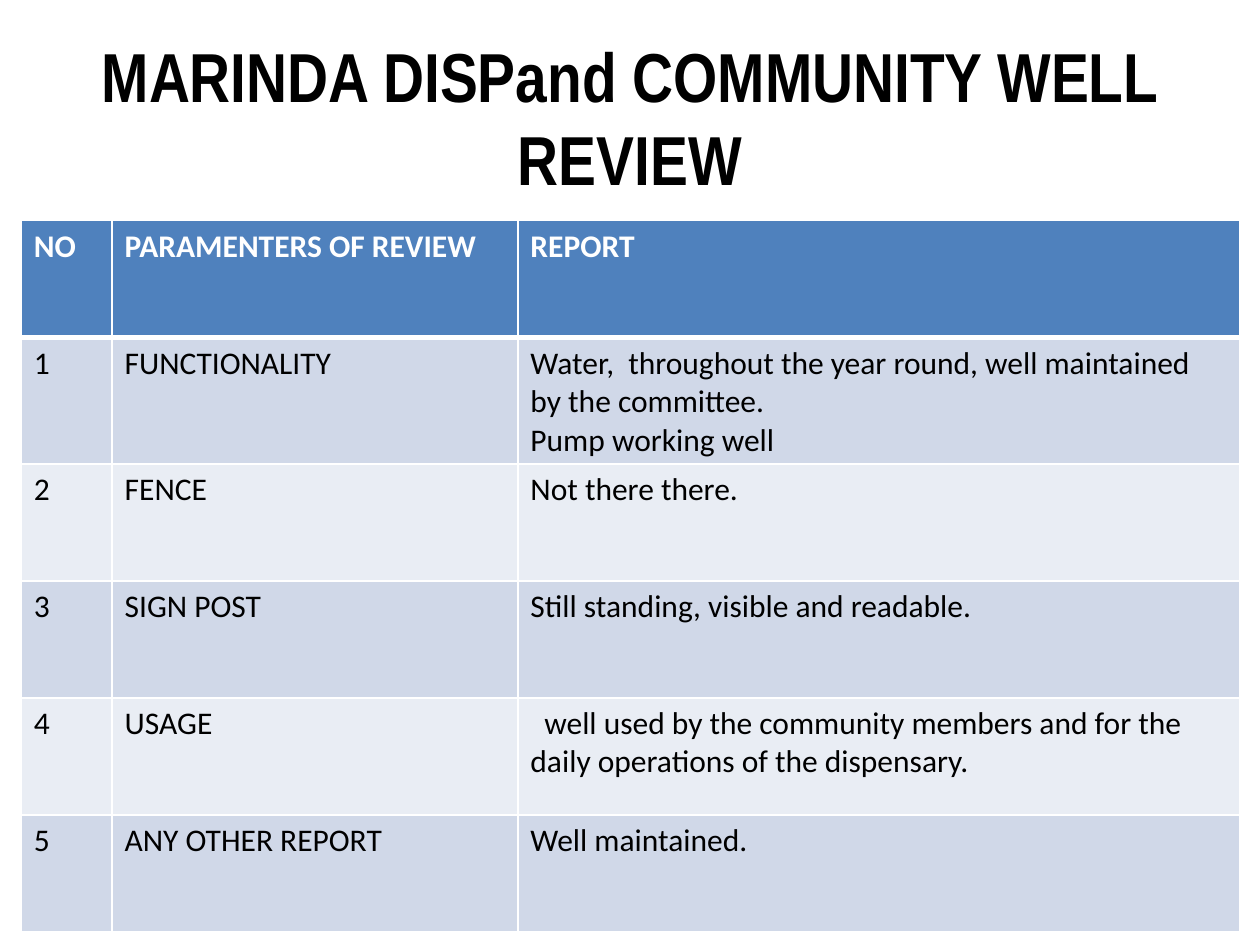
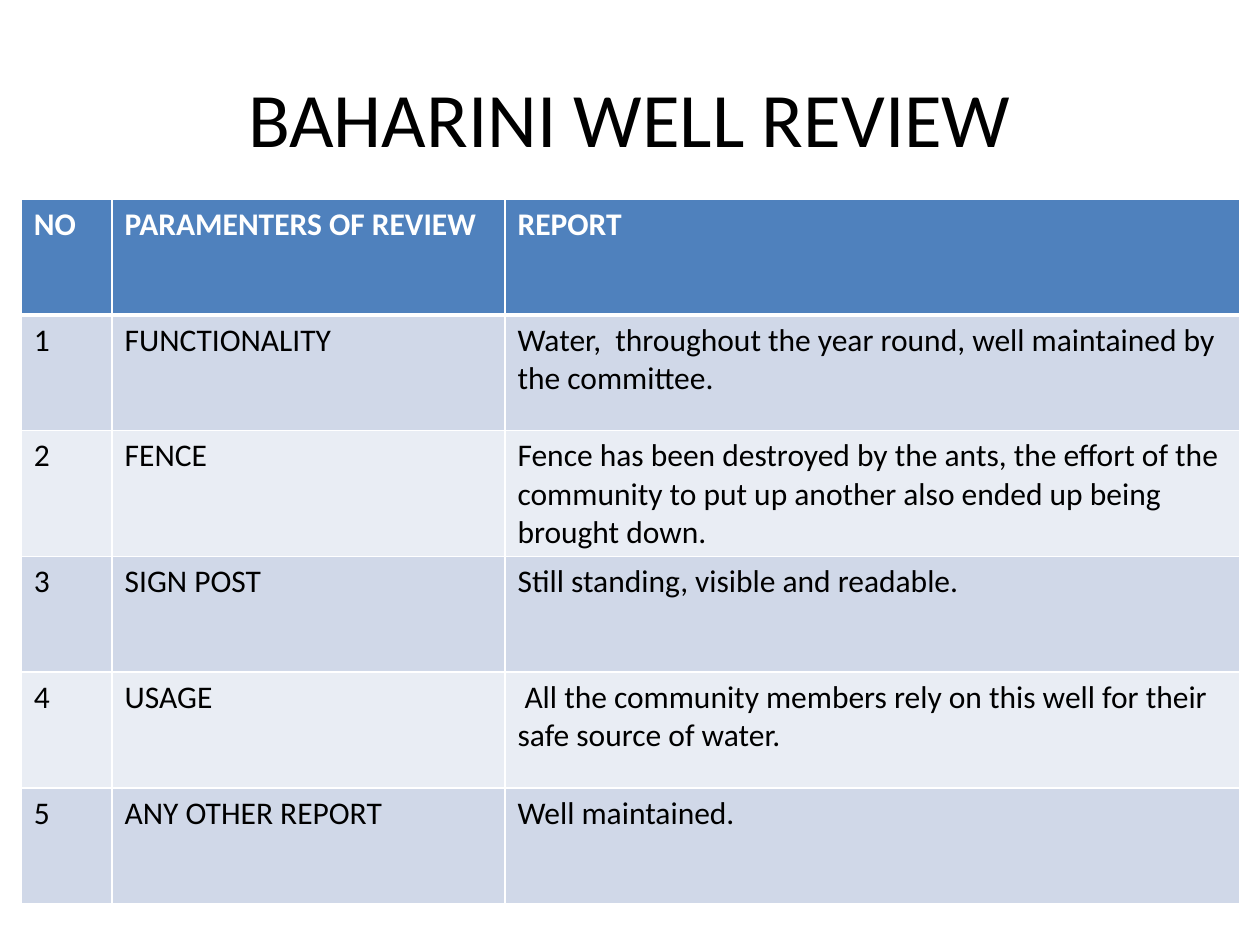
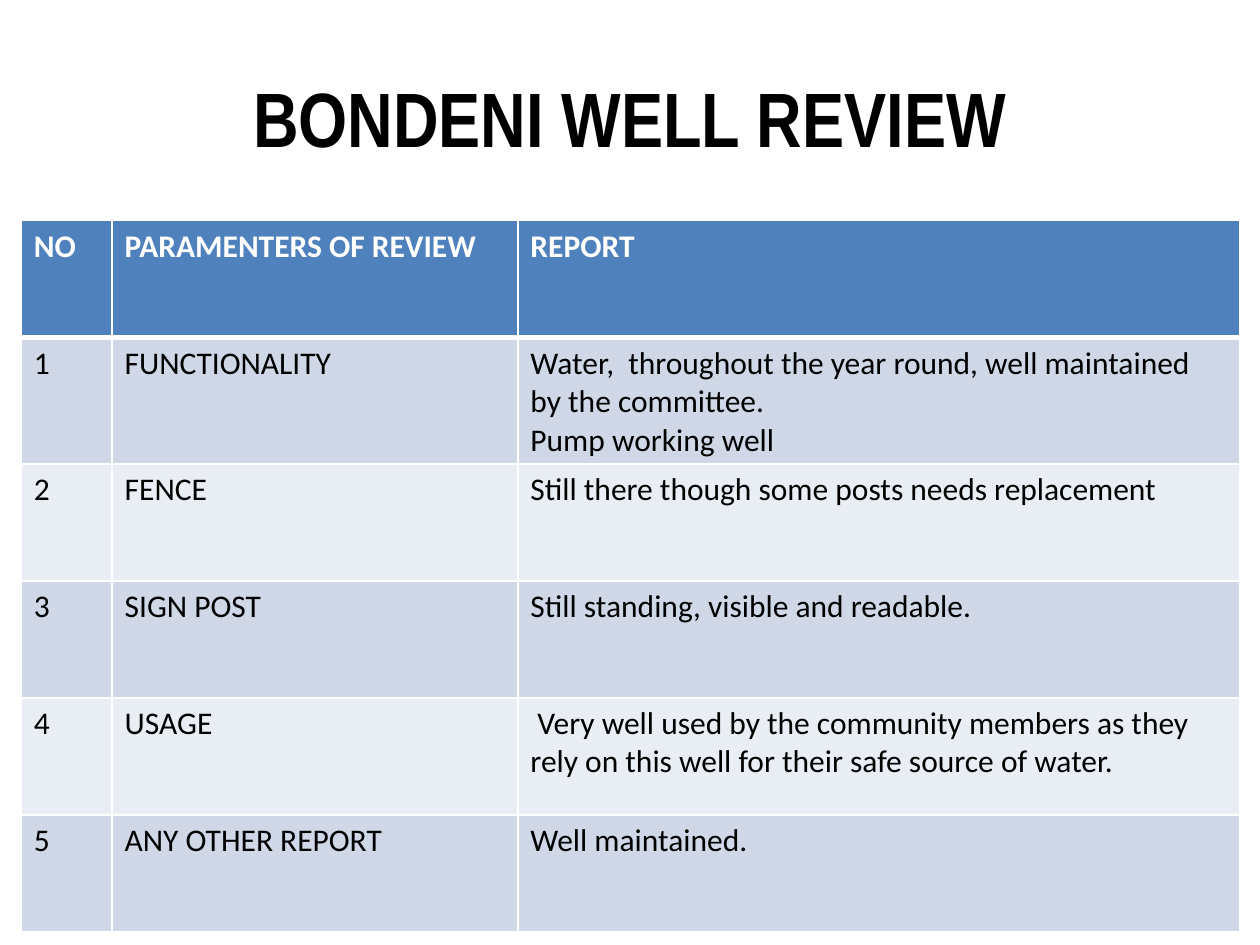
"""Build three well review slides, each with a title and a report table."""
from dataclasses import dataclass

import lxml.etree
import pptx
import pptx.dml.color
import pptx.enum.text
import pptx.oxml.ns
import pptx.slide
import pptx.table
import pptx.text.text
import pptx.util
from pptx.util import Cm

COLORS = {
    "text": "000000",
    "white": "FFFFFF",
    "header": "4F81BD",
    "odd_row": "D0D8E8",
    "even_row": "E9EDF4",
}
BODY_FONT = "Calibri"
TITLE_FONT = "Arial Narrow"
HEADINGS = ("NO", "PARAMENTERS OF REVIEW", "REPORT")
PARAMETERS = ("FUNCTIONALITY", "FENCE", "SIGN POST", "USAGE", "ANY OTHER REPORT")
WATER = "Water,  throughout the year round, well maintained by the committee."
WATER_AND_PUMP = WATER + "\nPump working well"
SIGN_POST = "Still standing, visible and readable."
MAINTAINED = "Well maintained."
TABLE_LEFT = Cm(0.43)
TABLE_WIDTH = Cm(24.56)
NUMBER_WIDTH = Cm(1.83)
USAGE_ROW = 4


@dataclass(frozen=True)
class Review:
    title: str
    functionality: str
    fence: str
    usage: str
    usage_indent: pptx.util.Length = Cm(0.14)
    title_font: str = TITLE_FONT
    title_size: float = 44
    title_bold: bool = True
    table_top: pptx.util.Length = Cm(4.45)
    row_height: pptx.util.Length = Cm(2.36)
    parameter_width: pptx.util.Length = Cm(8.18)

    def rows(self) -> list[tuple[str, ...]]:
        reports = (self.functionality, self.fence, SIGN_POST, self.usage, MAINTAINED)
        numbered = enumerate(zip(PARAMETERS, reports), start=1)
        return [HEADINGS] + [(str(number), *texts) for number, texts in numbered]


REVIEWS = (
    Review(
        title="MARINDA DISPand COMMUNITY WELL REVIEW",
        title_size=39.6,
        functionality=WATER_AND_PUMP,
        fence="Not there there.",
        usage="well used by the community members and for the daily operations of the dispensary.",
        usage_indent=Cm(0.28),
    ),
    Review(
        title="BAHARINI WELL REVIEW",
        title_font=BODY_FONT,
        title_bold=False,
        functionality=WATER,
        fence="Fence has been destroyed by the ants, the effort of the community "
        "to put up another also ended up being brought down.",
        usage="All the community members rely on this well for their safe source of water.",
        table_top=Cm(4.02),
        row_height=Cm(2.33),
        parameter_width=Cm(7.92),
    ),
    Review(
        title="BONDENI WELL REVIEW",
        functionality=WATER_AND_PUMP,
        fence="Still there though some posts needs replacement",
        usage="Very well used by the community members as they rely on this well "
        "for their safe source of water.",
    ),
)


def rgb(name: str) -> pptx.dml.color.RGBColor:
    return pptx.dml.color.RGBColor.from_string(COLORS[name])


def format_text(
    text_frame: pptx.text.text.TextFrame, font: str, size: float, color: str, bold: bool
) -> None:
    for paragraph in text_frame.paragraphs:
        for run in paragraph.runs:
            run.font.name = font
            run.font.size = pptx.util.Pt(size)
            run.font.bold = bold
            run.font.color.rgb = rgb(color)


def add_title(slide: pptx.slide.Slide, review: Review) -> None:
    text_frame = slide.shapes.add_textbox(
        Cm(1.27), Cm(0.76), Cm(22.86), Cm(3.18)
    ).text_frame
    text_frame.word_wrap = True
    text_frame.vertical_anchor = pptx.enum.text.MSO_ANCHOR.MIDDLE
    text_frame.text = review.title
    text_frame.paragraphs[0].alignment = pptx.enum.text.PP_ALIGN.CENTER
    format_text(text_frame, review.title_font, review.title_size, "text", review.title_bold)


def add_borders(cell: pptx.table._Cell, row_index: int) -> None:
    qualified = pptx.oxml.ns.qn
    properties = cell._tc.get_or_add_tcPr()
    widths = {
        "L": 1,
        "R": 1,
        "T": 3 if row_index == 1 else 1,
        "B": 3 if row_index == 0 else 1,
    }
    for side, width in widths.items():
        line = lxml.etree.SubElement(
            properties, qualified(f"a:ln{side}"), w=str(pptx.util.Pt(width))
        )
        fill = lxml.etree.SubElement(line, qualified("a:solidFill"))
        lxml.etree.SubElement(fill, qualified("a:srgbClr"), val=COLORS["white"])


def format_cell(cell: pptx.table._Cell, text: str, row_index: int) -> None:
    is_header = row_index == 0
    row_color = "odd_row" if row_index % 2 else "even_row"
    cell.text_frame.text = text
    format_text(cell.text_frame, BODY_FONT, 18, "white" if is_header else "text", is_header)
    add_borders(cell, row_index)
    cell.fill.solid()
    cell.fill.fore_color.rgb = rgb("header" if is_header else row_color)


def add_report(slide: pptx.slide.Slide, review: Review) -> None:
    rows = review.rows()
    table = slide.shapes.add_table(
        len(rows), len(HEADINGS), TABLE_LEFT, review.table_top,
        TABLE_WIDTH, review.row_height * len(rows),
    ).table
    report_width = TABLE_WIDTH - NUMBER_WIDTH - review.parameter_width
    for column, width in zip(
        table.columns, (NUMBER_WIDTH, review.parameter_width, report_width)
    ):
        column.width = width
    for row_index, texts in enumerate(rows):
        table.rows[row_index].height = review.row_height
        for column_index, text in enumerate(texts):
            format_cell(table.cell(row_index, column_index), text, row_index)
    usage = table.cell(USAGE_ROW, len(HEADINGS) - 1).text_frame.paragraphs[0]
    usage._p.get_or_add_pPr().set("indent", str(review.usage_indent))


def main() -> None:
    presentation = pptx.Presentation()
    presentation.slide_width = Cm(25.4)
    presentation.slide_height = Cm(19.05)
    for review in REVIEWS:
        slide = presentation.slides.add_slide(presentation.slide_layouts[6])
        add_title(slide, review)
        add_report(slide, review)
    presentation.save("out.pptx")


if __name__ == "__main__":
    main()
